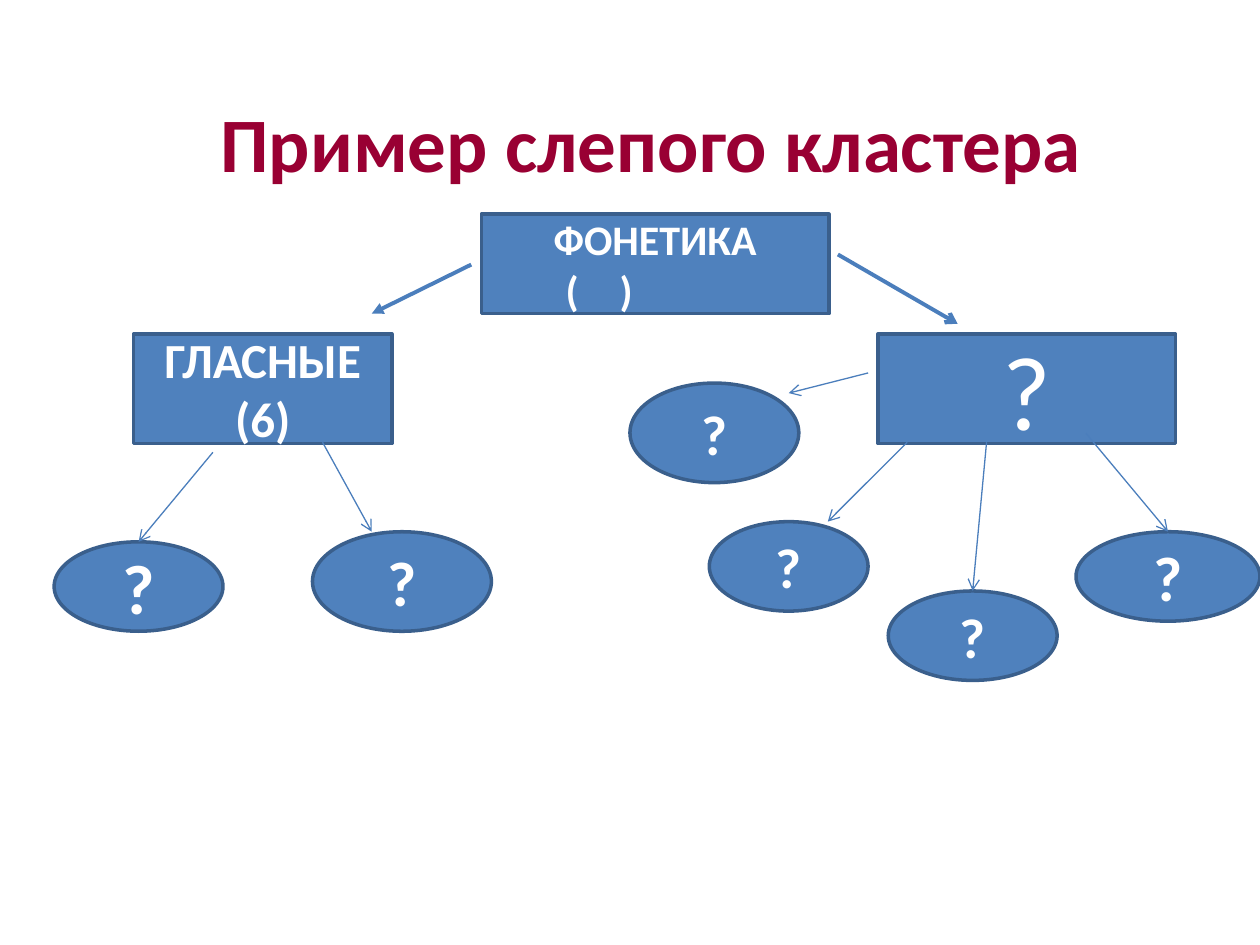
import pptx
import pptx.dml.color
import pptx.enum.shapes
import pptx.enum.text
import pptx.oxml
import pptx.oxml.ns
import pptx.util
from lxml import etree

Inches = pptx.util.Inches
Pt = pptx.util.Pt
RGBColor = pptx.dml.color.RGBColor
MSO_SHAPE = pptx.enum.shapes.MSO_SHAPE
PP_ALIGN = pptx.enum.text.PP_ALIGN
qn = pptx.oxml.ns.qn

CRIMSON = RGBColor(0x99, 0x00, 0x33)
BLUE = RGBColor(0x4F, 0x81, 0xBD)
DARK_BLUE = RGBColor(0x3A, 0x5F, 0x8C)
LINE_BLUE = RGBColor(0x4B, 0x7E, 0xBC)
WHITE = RGBColor(0xFF, 0xFF, 0xFF)


class ClusterSlide:
    font_name = "Calibri"

    def __init__(self, slide):
        self.slide = slide

    def set_text(self, sp, lines, size, color, bold=True):
        tf = sp.text_frame
        tf.word_wrap = True
        tf.vertical_anchor = pptx.enum.text.MSO_ANCHOR.MIDDLE
        for i, line in enumerate(lines):
            p = tf.paragraphs[0] if i == 0 else tf.add_paragraph()
            p.add_run().text = line
            p.alignment = PP_ALIGN.CENTER
            p.font.name = self.font_name
            p.font.size = Pt(size)
            p.font.bold = bold
            p.font.color.rgb = color

    def title(self, text, left, top, width, height):
        sp = self.slide.shapes.add_textbox(
            Inches(left), Inches(top), Inches(width), Inches(height))
        self.set_text(sp, [text], 44, CRIMSON)

    def node(self, kind, box, lines, size, bold=True):
        sp = self.slide.shapes.add_shape(kind, *map(Inches, box))
        sp.shadow.inherit = False
        sp.fill.solid()
        sp.fill.fore_color.rgb = BLUE
        sp.line.color.rgb = DARK_BLUE
        sp.line.width = Pt(2)
        self.set_text(sp, lines, size, WHITE, bold)
        return sp

    def blank_field(self, p, start, end):
        pPr = p._p.get_or_add_pPr()
        p.alignment = PP_ALIGN.LEFT
        pPr.set("marL", "0")
        pPr.set("indent", str(Inches(start)))
        tabs = etree.Element(qn("a:tabLst"))
        etree.SubElement(tabs, qn("a:tab"), pos=str(Inches(end)), algn="l")
        pPr.insert(0, tabs)

    def arrow(self, start, end, width=0.75, head="arrow", target=None):
        cxn = self.slide.shapes.add_connector(
            pptx.enum.shapes.MSO_CONNECTOR.STRAIGHT, *map(Inches, start + end))
        if target is not None:
            cxn.end_connect(target, 0)
        cxn.line.color.rgb = LINE_BLUE
        cxn.line.width = Pt(width)
        ln = cxn._element.spPr.find(qn("a:ln"))
        etree.SubElement(ln, qn("a:tailEnd"), type=head)
        etree.SubElement(cxn._element.spPr, qn("a:effectLst"))


def main():
    prs = pptx.Presentation()
    prs.slide_width = Inches(10)
    prs.slide_height = Inches(7.5)
    s = ClusterSlide(prs.slides.add_slide(prs.slide_layouts[6]))

    s.title("Пример слепого кластера", 0.67, 0.5, 9, 1.25)

    phonetics = s.node(MSO_SHAPE.RECTANGLE, (3.82, 1.7, 2.76, 0.79),
                       ["ФОНЕТИКА", "(\t)"], 24)
    s.blank_field(phonetics.text_frame.paragraphs[1], 0.57, 1.88)
    s.node(MSO_SHAPE.RECTANGLE, (1.06, 2.65, 2.05, 0.87), ["ГЛАСНЫЕ", "(6)"], 28)
    s.node(MSO_SHAPE.RECTANGLE, (6.97, 2.65, 2.36, 0.87), ["?"], 60, bold=False)

    ovals = [
        ((0.43, 4.3, 1.34, 0.71), 40),
        ((2.48, 4.22, 1.42, 0.79), 36),
        ((5, 3.04, 1.34, 0.79), 32),
        ((5.63, 4.14, 1.26, 0.71), 32),
        ((7.05, 4.69, 1.34, 0.71), 32),
        ((8.54, 4.22, 1.46, 0.71), 36),
    ]
    vowel_left, _, _, _, consonant_mid, consonant_right = [
        s.node(MSO_SHAPE.OVAL, box, ["?"], size) for box, size in ovals]

    s.arrow((3.74, 2.1), (2.95, 2.49), 2.25, "triangle")
    s.arrow((6.65, 2.02), (7.6, 2.57), 2.25)
    s.arrow((1.69, 3.59), (1.1, 4.3), target=vowel_left)
    s.arrow((2.56, 3.51), (2.95, 4.22))
    s.arrow((7.83, 3.51), (7.72, 4.69), target=consonant_mid)
    s.arrow((6.89, 2.96), (6.26, 3.12))
    s.arrow((7.2, 3.51), (6.57, 4.14))
    s.arrow((8.62, 3.44), (9.27, 4.22), target=consonant_right)

    prs.save("out.pptx")


if __name__ == "__main__":
    main()
